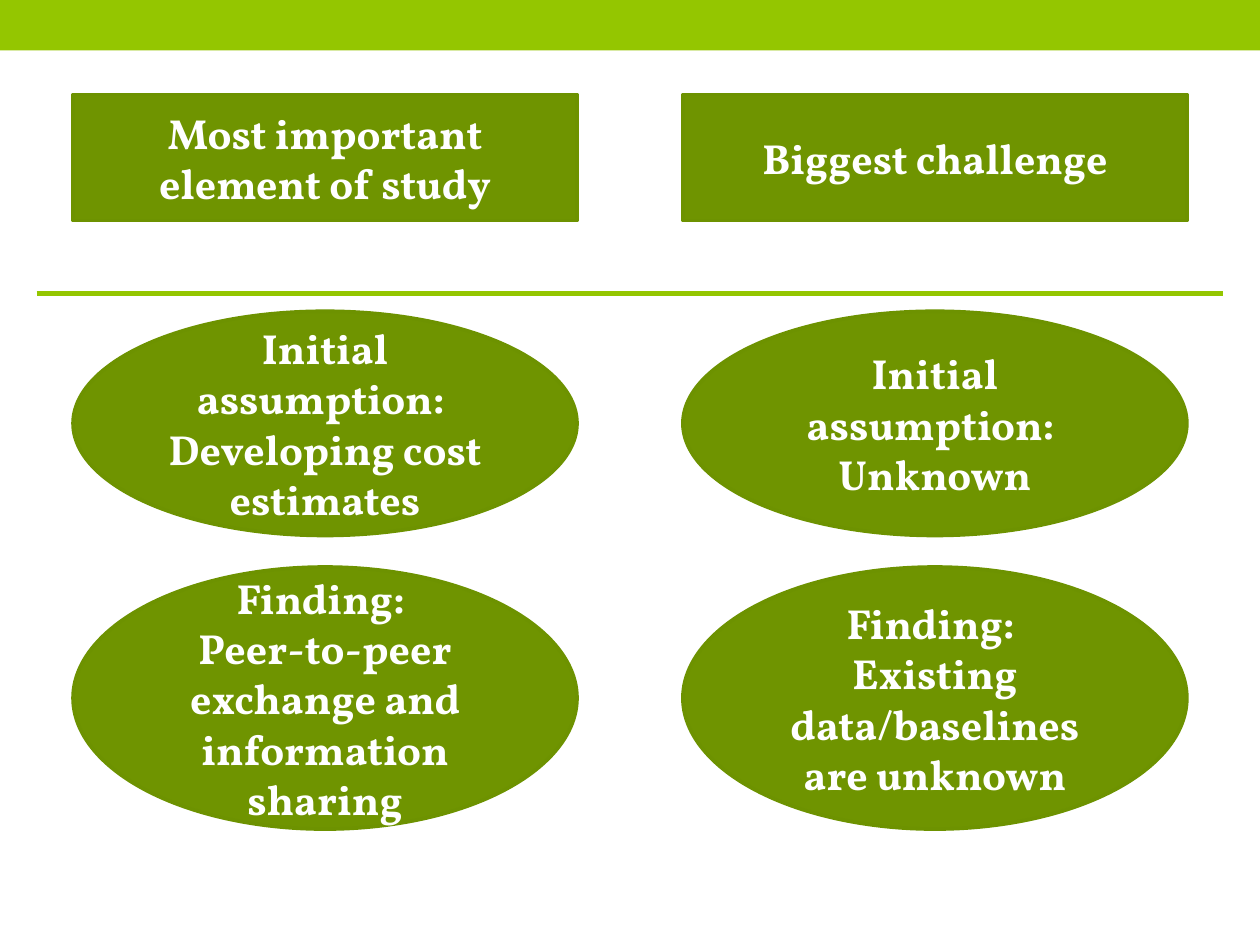
"""Build a slide that sets initial assumptions against findings in two columns."""
from lxml import etree
from pptx import Presentation
from pptx.dml.color import RGBColor
from pptx.enum import shapes, text
from pptx.oxml import ns
from pptx.util import Inches, Pt

LIME, OLIVE, EDGE, WHITE = "94C600", "6F9400", "6D9200", "FFFFFF"
RECTANGLE, OVAL = shapes.MSO_SHAPE.RECTANGLE, shapes.MSO_SHAPE.OVAL
COLUMNS = [
    [
        ["Most important element of study"],
        ["Initial assumption: ", "Developing cost estimates"],
        ["Finding: ", "Peer-to-peer exchange and information sharing"],
    ],
    [
        ["Biggest challenge"],
        ["Initial assumption: ", "Unknown"],
        ["Finding: ", "Existing data/baselines are unknown"],
    ],
]
ROWS = [(RECTANGLE, 0.75, 1), (OVAL, 2.47, 1.78), (OVAL, 4.5, 2.08)]
FONT = {"name": "Vollkorn", "size": Pt(24), "bold": True}
SLIDE_WIDTH, SLIDE_HEIGHT = 10, 7.5
MARGIN, COLUMN_WIDTH = 0.58, 4
RULE_MARGIN, RULE_TOP = 0.29, 2.33


def color(value):
    return RGBColor.from_string(value)


def add_filled(slide, kind, box, fill):
    shape = slide.shapes.add_shape(kind, *map(Inches, box))
    shape.shadow.inherit = False
    shape.fill.solid()
    shape.fill.fore_color.rgb = color(fill)
    shape.line.fill.background()
    return shape


def add_label(slide, kind, box, lines):
    shape = add_filled(slide, kind, box, OLIVE)
    shape.line.color.rgb = color(EDGE)
    shape.line.width = Pt(2.08)
    frame = shape.text_frame
    frame.word_wrap = True
    frame.vertical_anchor = text.MSO_ANCHOR.MIDDLE
    frame.text = "\n".join(lines)
    for paragraph in frame.paragraphs:
        paragraph.alignment = text.PP_ALIGN.CENTER
        for run in paragraph.runs:
            for name, value in FONT.items():
                setattr(run.font, name, value)
            run.font.color.rgb = color(WHITE)


def add_rule(slide):
    ends = (RULE_MARGIN, RULE_TOP, SLIDE_WIDTH - RULE_MARGIN, RULE_TOP)
    rule = slide.shapes.add_connector(
        shapes.MSO_CONNECTOR.STRAIGHT, *map(Inches, ends))
    rule.line.color.rgb = color(LIME)
    rule.line.width = Pt(3)
    etree.SubElement(rule._element.spPr, ns.qn("a:effectLst"))


def main():
    presentation = Presentation()
    presentation.slide_width = Inches(SLIDE_WIDTH)
    presentation.slide_height = Inches(SLIDE_HEIGHT)
    slide = presentation.slides.add_slide(presentation.slide_layouts[6])
    add_filled(slide, RECTANGLE, (0, 0, SLIDE_WIDTH, 0.4), LIME)
    lefts = (MARGIN, SLIDE_WIDTH - MARGIN - COLUMN_WIDTH)
    for left, labels in zip(lefts, COLUMNS):
        for (kind, top, height), lines in zip(ROWS, labels):
            add_label(slide, kind, (left, top, COLUMN_WIDTH, height), lines)
    add_rule(slide)
    presentation.save("out.pptx")


if __name__ == "__main__":
    main()
